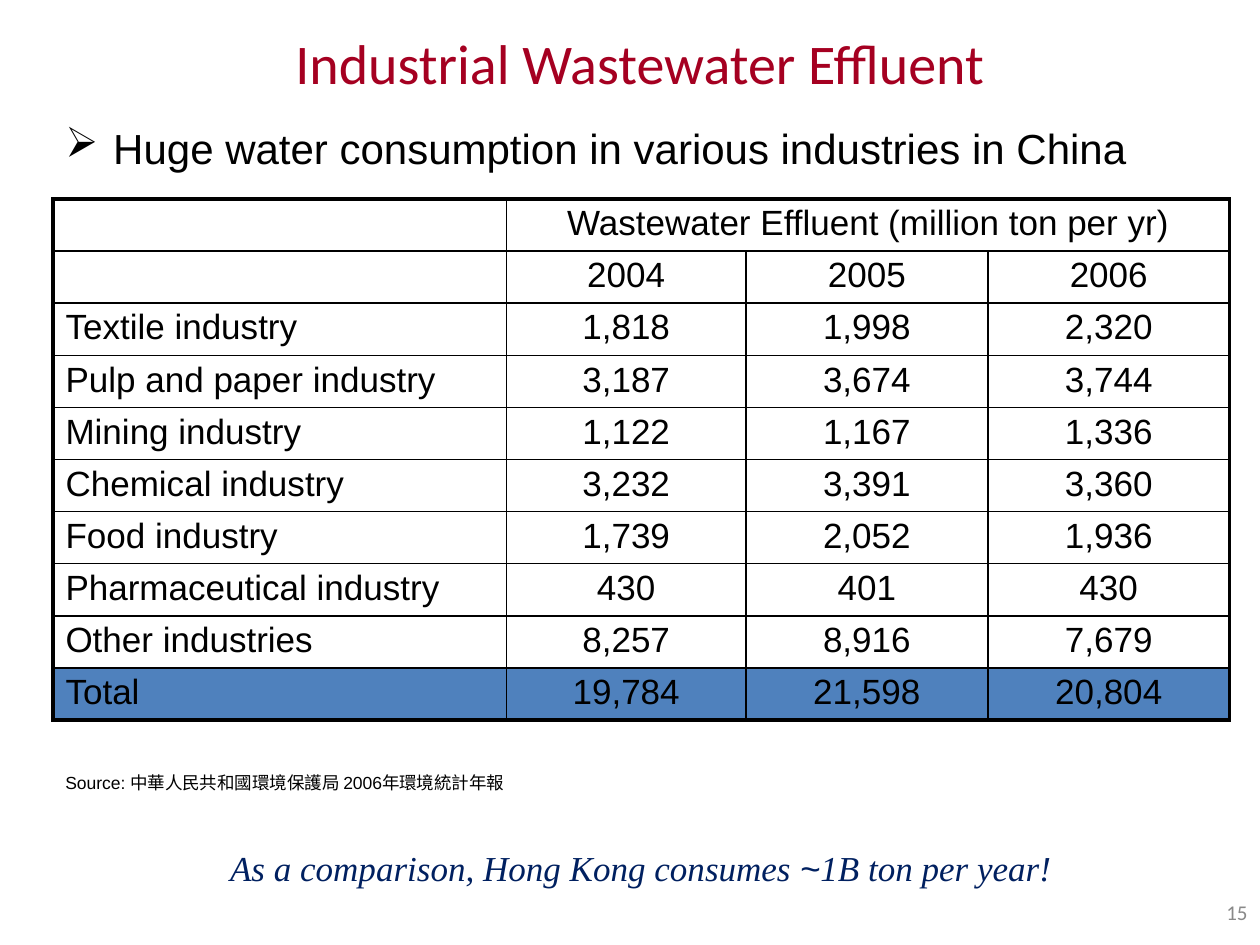
"""Build the slide on industrial wastewater effluent."""
from dataclasses import dataclass

from lxml.etree import SubElement as Sub
from pptx import Presentation
from pptx.dml.color import RGBColor as Color
from pptx.enum.text import MSO_ANCHOR as Anchor, PP_ALIGN as Align
from pptx.oxml.ns import qn
from pptx.util import Inches, Pt


@dataclass(frozen=True)
class Theme:
    """Colours, fonts and type sizes."""
    ink: str = "000000"
    red: str = "A50021"
    navy: str = "002060"
    gray: str = "898989"
    blue: str = "4F81BD"
    body: str = "Arial"
    head: str = "Calibri"
    serif: str = "Times New Roman"
    title: int = 32
    lead: int = 24
    text: int = 20
    page: int = 12
    note: int = 10
    thin: float = 1
    thick: float = 2.25


class Deck:
    """Hold the theme and the current slide."""

    def __init__(self, theme):
        """Start a deck with one title-only slide."""
        self.theme = theme
        self.prs = Presentation()
        self.prs.slide_width = Inches(10)
        self.prs.slide_height = Inches(7.5)
        self.slide = self.prs.slides.add_slide(self.prs.slide_layouts[5])

    def style(self, para, size, face=None, tint=None, align=Align.LEFT):
        """Set the font and alignment of a paragraph."""
        para.alignment = align
        font = para.font
        font.size = Pt(size)
        font.name = face or self.theme.body
        font.color.rgb = Color.from_string(tint or self.theme.ink)

    def title(self, text, box):
        """Place and fill the title."""
        shape = self.slide.shapes.title
        shape.left, shape.top, shape.width, shape.height = map(Inches, box)
        frame = shape.text_frame
        frame.text = text
        frame.vertical_anchor = Anchor.MIDDLE
        self.style(frame.paragraphs[0], self.theme.title, self.theme.head,
                   self.theme.red, Align.CENTER)

    def text(self, text, box, size, face=None, tint=None, align=Align.LEFT,
             anchor=Anchor.TOP):
        """Add a text box and return its paragraph."""
        frame = self.slide.shapes.add_textbox(*map(Inches, box)).text_frame
        frame.word_wrap = True
        frame.vertical_anchor = anchor
        para = frame.paragraphs[0]
        if text:
            para.add_run().text = text
        self.style(para, size, face, tint, align)
        return para

    def bullet(self, text, box, mark, indent):
        """Add a line with a hanging bullet."""
        para = self.text(text, box, self.theme.lead)
        props = para._p.get_or_add_pPr()
        props.set("marL", str(Inches(indent)))
        props.set("indent", str(-Inches(indent)))
        sign = props.makeelement(qn("a:buChar"), {"char": mark})
        props.insert_element_before(sign, "a:tabLst", "a:defRPr", "a:extLst")

    def remark(self, parts, box):
        """Add a centred italic line of (text, font) parts."""
        theme = self.theme
        para = self.text("", box, theme.text, theme.serif, theme.navy,
                         Align.CENTER)
        para.font.italic = True
        for text, face in parts:
            run = para.add_run()
            run.text = text
            run.font.name = face

    def edges(self, cell, outer):
        """Draw cell borders, thick on the outer sides."""
        theme = self.theme
        props = cell._tc.get_or_add_tcPr()
        for side in "LRTB":
            width = theme.thick if side in outer else theme.thin
            line = Sub(props, qn("a:ln" + side), w=str(Pt(width)))
            fill = Sub(line, qn("a:solidFill"))
            Sub(fill, qn("a:srgbClr"), val=theme.ink)

    def table(self, rows, spot, cols, high):
        """Add a table with a wide head and a filled last row."""
        size = (sum(cols), high * len(rows))
        grid = self.slide.shapes.add_table(
            len(rows), len(cols), *map(Inches, spot + size)).table
        grid.first_row = grid.horz_banding = False
        for col, wide in zip(grid.columns, cols):
            col.width = Inches(wide)
        grid.cell(0, 1).merge(grid.cell(0, len(cols) - 1))
        for r, row in enumerate(rows):
            grid.rows[r].height = Inches(high)
            for c, text in enumerate(row):
                self.cell(grid.cell(r, c), text, r, c, len(rows), len(cols))

    def cell(self, cell, text, r, c, down, across):
        """Fill and format one table cell."""
        last = r == down - 1
        span = cell.span_width if cell.is_merge_origin else 1
        tests = {"L": c == 0, "R": c + span == across, "T": r == 0, "B": last}
        cell.margin_top = cell.margin_bottom = Inches(0.04)
        cell.text = text
        self.style(cell.text_frame.paragraphs[0], self.theme.text,
                   align=Align.CENTER if c else Align.LEFT)
        self.edges(cell, [side for side, hit in tests.items() if hit])
        if last:
            cell.fill.solid()
            cell.fill.fore_color.rgb = Color.from_string(self.theme.blue)
        else:
            cell.fill.background()


ROWS = [
    ("", "Wastewater Effluent (million ton per yr)", "", ""),
    ("", "2004", "2005", "2006"),
    ("Textile industry", "1,818", "1,998", "2,320"),
    ("Pulp and paper industry", "3,187", "3,674", "3,744"),
    ("Mining industry", "1,122", "1,167", "1,336"),
    ("Chemical industry", "3,232", "3,391", "3,360"),
    ("Food industry", "1,739", "2,052", "1,936"),
    ("Pharmaceutical industry", "430", "401", "430"),
    ("Other industries", "8,257", "8,916", "7,679"),
    ("Total", "19,784", "21,598", "20,804"),
]


def main():
    """Build and save the slide."""
    theme = Theme()
    deck = Deck(theme)
    deck.text("15", (7.67, 6.98, 2.33, 0.52), theme.page, theme.head,
              theme.gray, Align.RIGHT, Anchor.MIDDLE)
    deck.title("Industrial Wastewater Effluent", (0.58, 0.08, 9, 0.83))
    deck.table(ROWS, (0.42, 1.58), (3.6, 1.9, 1.92, 1.92), 0.41)
    deck.text("Source: 中華人民共和國環境保護局 2006年環境統計年報",
              (0.42, 6.08, 3.73, 0.27), theme.note)
    deck.bullet("Huge water consumption in various industries in China",
                (0.42, 0.92, 9.25, 0.5), "➢", 0.38)
    deck.remark([("As a comparison, Hong Kong consumes ", theme.serif),
                 ("~", theme.body), ("1B ton per year!", theme.serif)],
                (0.42, 6.67, 9.33, 0.44))
    deck.prs.save("out.pptx")


if __name__ == "__main__":
    main()
